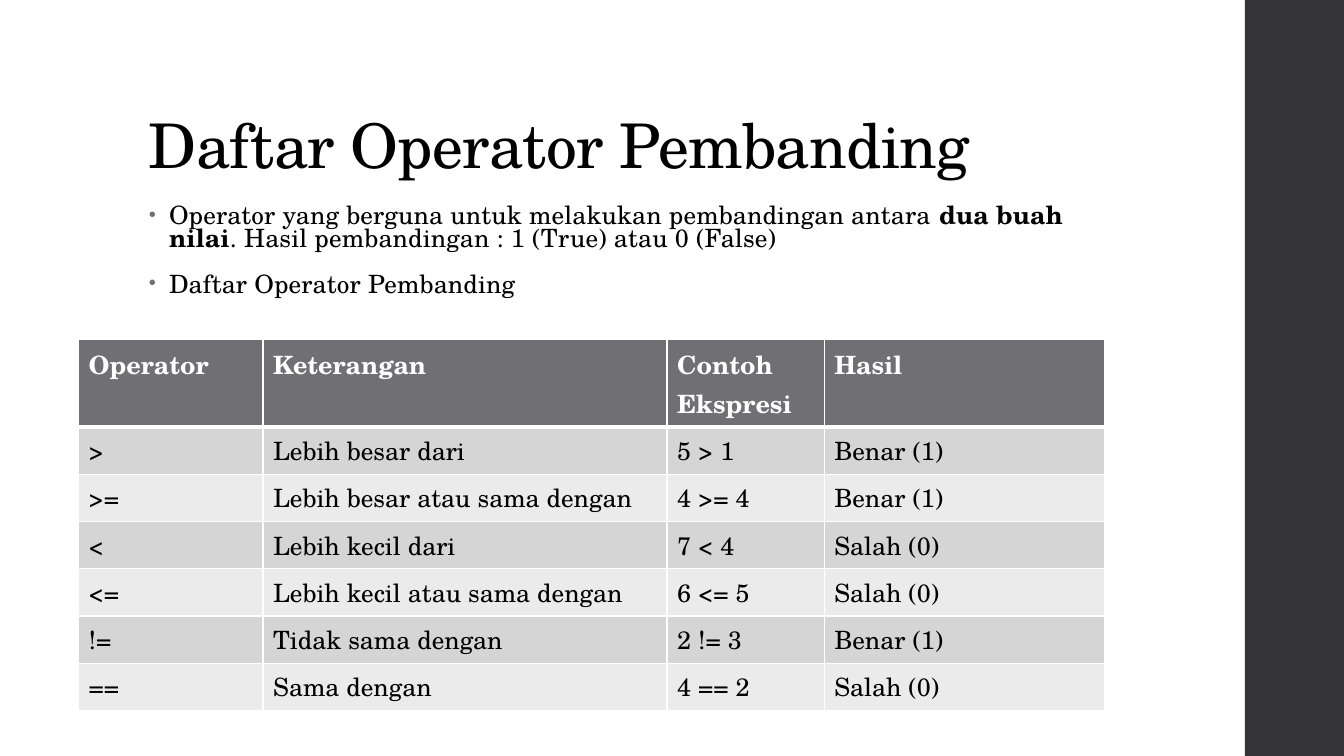
from lxml.etree import SubElement
from pptx import Presentation
from pptx.dml.color import RGBColor
from pptx.enum.shapes import MSO_SHAPE
from pptx.enum.text import MSO_ANCHOR, MSO_AUTO_SIZE, PP_ALIGN
from pptx.oxml.ns import qn
from pptx.util import Cm, Pt

# Content
TITLE = "Daftar Operator Pembanding"
BULLETS = [
    [("Operator yang berguna untuk melakukan pembandingan antara ", False),
     ("dua buah nilai", True),
     (". Hasil pembandingan : 1 (True) atau 0 (False)", False)],
    [("Daftar Operator Pembanding", False)],
]
ROWS = [
    ("Operator", "Keterangan", "Contoh Ekspresi", "Hasil"),
    (">", "Lebih besar dari", "5 > 1", "Benar (1)"),
    (">=", "Lebih besar atau sama dengan", "4 >= 4", "Benar (1)"),
    ("<", "Lebih kecil dari", "7 < 4", "Salah (0)"),
    ("<=", "Lebih kecil atau sama dengan", "6 <= 5", "Salah (0)"),
    ("!=", "Tidak sama dengan", "2 != 3", "Benar (1)"),
    ("==", "Sama dengan", "4 == 2", "Salah (0)"),
]

# Look
FONT = "TeX Gyre Schola"
BLACK, WHITE, GREY, DARK = "000000", "FFFFFF", "6F6F74", "353537"
BANDS = ["D5D5D6", "EBEBEB"]
COLUMN_WIDTHS = [4.65, 10.18, 3.96, 7.06]
HEADER_HEIGHT, ROW_HEIGHT = 2.2, 1.19


def color(value):
    return RGBColor.from_string(value)


def add_text(para, text, size=18, ink=BLACK, bold=False, spacing=0):
    span = para.add_run()
    span.text = text
    font = span.font
    font.name, font.size, font.bold = FONT, Pt(size), bold
    font.color.rgb = color(ink)
    if spacing:
        font._element.set("spc", str(round(spacing * 100)))


def add_bullet(para):
    props = para._p.get_or_add_pPr()
    props.set("marL", str(Cm(0.51)))
    props.set("indent", str(Cm(-0.51)))
    SubElement(SubElement(props, qn("a:buClr")), qn("a:srgbClr")).set("val", GREY)
    SubElement(props, qn("a:buSzPct")).set("val", "80000")
    SubElement(props, qn("a:buFont")).set("typeface", "Arial")
    SubElement(props, qn("a:buChar")).set("char", "•")


def set_borders(cell, **widths):
    props = cell._tc.get_or_add_tcPr()
    for side in ("lnL", "lnR", "lnT", "lnB"):
        line = SubElement(props, qn(f"a:{side}"), w=str(Pt(widths.get(side, 1))))
        fill = SubElement(line, qn("a:solidFill"))
        SubElement(fill, qn("a:srgbClr")).set("val", WHITE)


deck = Presentation()
deck.slide_width, deck.slide_height = Cm(33.87), Cm(19.05)
page = deck.slides.add_slide(deck.slide_layouts[5])

# Side band
band = page.shapes.add_shape(MSO_SHAPE.RECTANGLE, Cm(31.37), 0, Cm(2.5), deck.slide_height)
band.shadow.inherit = False
band.fill.solid()
band.fill.fore_color.rgb = color(DARK)
band.line.fill.background()

# Title
title = page.shapes.title
title.left, title.top, title.width, title.height = Cm(3.5), Cm(1.02), Cm(26.92), Cm(3.68)
frame = title.text_frame
frame.auto_size = MSO_AUTO_SIZE.NONE
frame.vertical_anchor = MSO_ANCHOR.BOTTOM
para = frame.paragraphs[0]
para.alignment = PP_ALIGN.LEFT
para.line_spacing = 0.9
add_text(para, TITLE, size=44, spacing=-0.5)

# Bullets
box = page.shapes.add_textbox(Cm(3.5), Cm(5.08), Cm(23.88), Cm(12.09))
frame = box.text_frame
frame.word_wrap = True
for index, spans in enumerate(BULLETS):
    para = frame.add_paragraph() if index else frame.paragraphs[0]
    add_bullet(para)
    para.line_spacing = 0.76
    para.space_before = Pt(14 if index else 0)
    para.space_after = Pt(2)
    for text, bold in spans:
        add_text(para, text, bold=bold, spacing=0.1)

# Operator table
table_height = HEADER_HEIGHT + ROW_HEIGHT * (len(ROWS) - 1)
table = page.shapes.add_table(len(ROWS), len(COLUMN_WIDTHS), Cm(1.98), Cm(8.56),
                              Cm(sum(COLUMN_WIDTHS)), Cm(table_height)).table
for column, width in zip(table.columns, COLUMN_WIDTHS):
    column.width = Cm(width)
for r, texts in enumerate(ROWS):
    header = r == 0
    table.rows[r].height = Cm(HEADER_HEIGHT if header else ROW_HEIGHT)
    for c, text in enumerate(texts):
        cell = table.cell(r, c)
        set_borders(cell, lnB=3 if header else 1, lnT=3 if r == 1 else 1)
        cell.fill.solid()
        cell.fill.fore_color.rgb = color(GREY if header else BANDS[(r - 1) % 2])
        add_text(cell.text_frame.paragraphs[0], text,
                 ink=WHITE if header else BLACK, bold=header)

deck.save("out.pptx")
